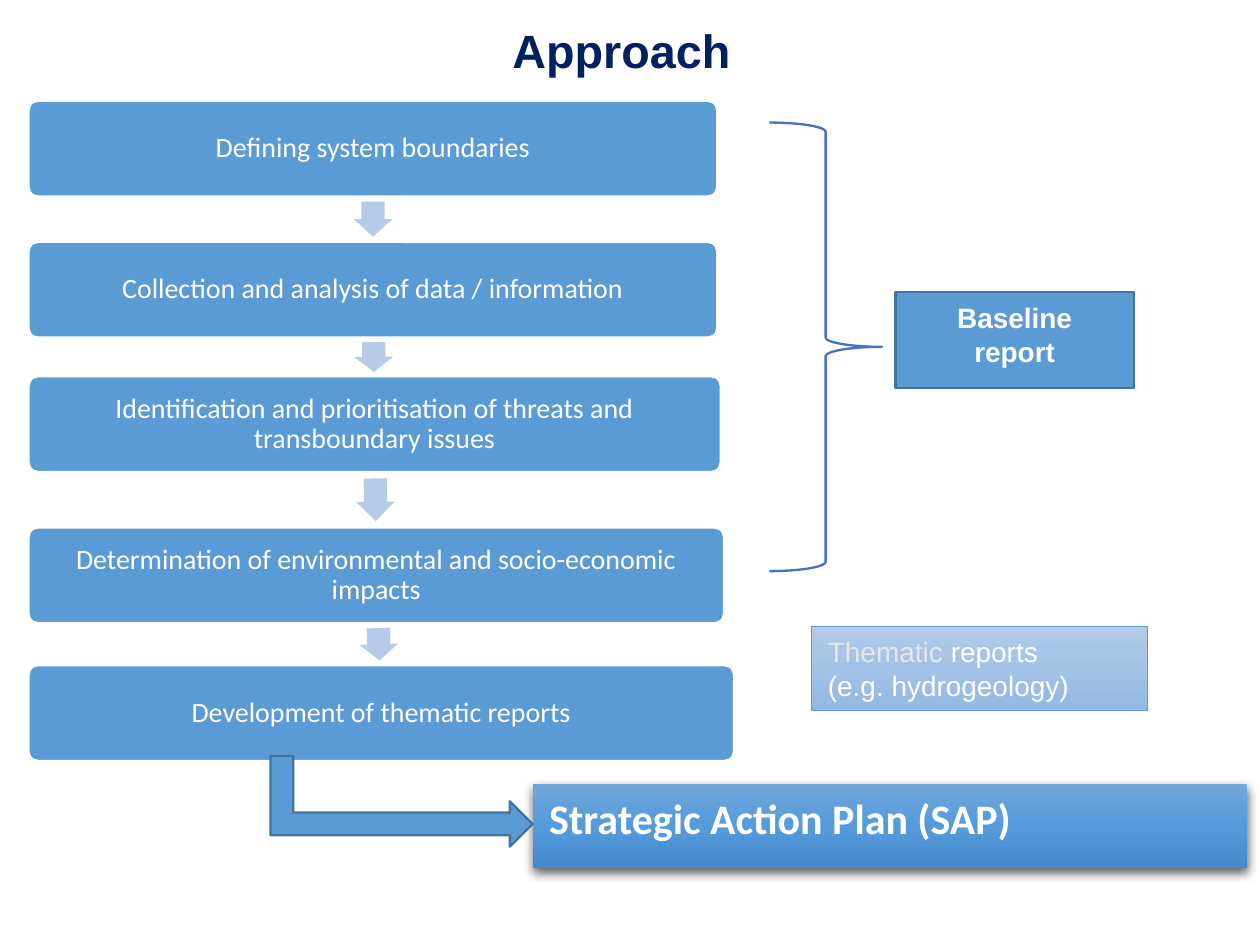
from copy import deepcopy
from dataclasses import dataclass
from itertools import pairwise
from math import atan2, degrees

from pptx import Presentation
from pptx.dml.color import RGBColor
from pptx.enum.shapes import MSO_SHAPE as Shape
from pptx.enum.text import MSO_ANCHOR as Anchor, PP_ALIGN as Align
from pptx.oxml import parse_xml
from pptx.oxml.ns import nsdecls, qn
from pptx.shapes.autoshape import Shape as AutoShape
from pptx.slide import Slide
from pptx.util import Inches, Pt

WHITE = RGBColor(0xFF, 0xFF, 0xFF)
NAVY = RGBColor(0x00, 0x20, 0x60)
BLUE = RGBColor(0x5B, 0x9B, 0xD5)
DARK_BLUE = RGBColor(0x43, 0x73, 0x9E)
BRACE_BLUE = RGBColor(0x44, 0x72, 0xC4)
PALE_BLUE = RGBColor(0xB5, 0xCB, 0xE7)
LIGHT_GREY = RGBColor(0xE7, 0xE6, 0xE6)
THEMATIC_GRADIENT = (RGBColor(0xB1, 0xCB, 0xE9), RGBColor(0xA3, 0xC1, 0xE5), RGBColor(0x93, 0xB9, 0xE4))
PLAN_GRADIENT = (RGBColor(0x71, 0xA6, 0xDB), RGBColor(0x55, 0x9B, 0xDB), RGBColor(0x44, 0x8A, 0xCA))

SLIDE_WIDTH = 7.5
SLIDE_HEIGHT = SLIDE_WIDTH * 3 / 4
STEP_LEFT = 0.17
STEP_HEIGHT = 0.57
ARROW_BREADTH = 0.23
ARROW_SHARE_OF_GAP = 0.77


@dataclass(frozen=True)
class Step:
    text: str
    top: float
    width: float

    @property
    def center(self) -> float:
        return STEP_LEFT + self.width / 2

    @property
    def bottom(self) -> float:
        return self.top + STEP_HEIGHT


STEPS = (
    Step("Defining system boundaries", 0.6, 4.1),
    Step("Collection and analysis of data / information", 1.44, 4.1),
    Step("Identification and prioritisation of threats and transboundary issues", 2.24, 4.12),
    Step("Determination of environmental and socio-economic impacts", 3.14, 4.14),
    Step("Development of thematic reports", 3.96, 4.2),
)


def write_text(shape: AutoShape, *lines: str, font: str = "Arial", size: float = 12,
               color: RGBColor = WHITE, bold: bool = False, align: Align = Align.LEFT,
               anchor: Anchor = Anchor.TOP, inset: float = 0.1, spacing: float = 1.0,
               lead: str = "", lead_color: RGBColor = WHITE) -> None:
    frame = shape.text_frame
    frame.word_wrap = True
    frame.vertical_anchor = anchor
    frame.margin_left = frame.margin_right = Inches(inset)
    frame.margin_top = frame.margin_bottom = Inches(0.05)
    for index, line in enumerate(lines):
        paragraph = frame.add_paragraph() if index else frame.paragraphs[0]
        paragraph.alignment = align
        paragraph.line_spacing = spacing
        pieces = [(line, color)]
        if lead and index == 0:
            pieces.insert(0, (lead, lead_color))
        for text, piece_color in pieces:
            run = paragraph.add_run()
            run.text = text
            run.font.name = font
            run.font.size = Pt(size)
            run.font.bold = bold
            run.font.color.rgb = piece_color


def add_shape(slide: Slide, kind: Shape, left: float, top: float, width: float, height: float,
              fill: RGBColor | None = None, line: RGBColor | None = None,
              line_width: float = 1, rotation: float = 0) -> AutoShape:
    shape = slide.shapes.add_shape(kind, Inches(left), Inches(top), Inches(width), Inches(height))
    shape.shadow.inherit = False
    shape.rotation = rotation
    if fill is None:
        shape.fill.background()
    else:
        shape.fill.solid()
        shape.fill.fore_color.rgb = fill
    if line is None:
        shape.line.fill.background()
    else:
        shape.line.color.rgb = line
        shape.line.width = Pt(line_width)
    return shape


def apply_gradient(shape: AutoShape, colors: tuple[RGBColor, ...]) -> None:
    shape.fill.gradient()
    shape.fill.gradient_angle = 270
    stop_elements = shape._element.spPr.find(qn("a:gradFill")).find(qn("a:gsLst"))
    stop_elements.append(deepcopy(stop_elements[0]))
    for index, (stop, color) in enumerate(zip(shape.fill.gradient_stops, colors)):
        stop.position = index / (len(colors) - 1)
        stop.color.rgb = color


def apply_shadow(shape: AutoShape) -> None:
    effects = shape._element.spPr.find(qn("a:effectLst"))
    effects.append(parse_xml(
        f'<a:outerShdw {nsdecls("a")} blurRad="{Pt(4.5)}" dist="{Pt(1.5)}" dir="5400000" '
        'algn="ctr" rotWithShape="0"><a:srgbClr val="000000"><a:alpha val="63000"/>'
        '</a:srgbClr></a:outerShdw>'))


def add_step(slide: Slide, step: Step) -> None:
    box = add_shape(slide, Shape.ROUNDED_RECTANGLE, STEP_LEFT, step.top, step.width, STEP_HEIGHT,
                    fill=BLUE, line=WHITE)
    box.adjustments[0] = 0.1
    write_text(box, step.text, font="Calibri", align=Align.CENTER, anchor=Anchor.MIDDLE,
               inset=0.05, spacing=0.9)


def add_step_arrow(slide: Slide, upper: Step, lower: Step) -> None:
    length = (lower.top - upper.bottom) * ARROW_SHARE_OF_GAP
    center_x = (upper.center + lower.center) / 2
    center_y = (upper.bottom + lower.top) / 2
    angle = degrees(atan2(lower.top - upper.top, lower.center - upper.center))
    arrow = add_shape(slide, Shape.RIGHT_ARROW, center_x - length / 2, center_y - ARROW_BREADTH / 2,
                      length, ARROW_BREADTH, fill=PALE_BLUE, rotation=angle)
    arrow.adjustments[0] = 0.6
    arrow.adjustments[1] = 0.5


def main() -> None:
    presentation = Presentation()
    presentation.slide_width = Inches(SLIDE_WIDTH)
    presentation.slide_height = Inches(SLIDE_HEIGHT)
    slide = presentation.slides.add_slide(presentation.slide_layouts[5])

    title = slide.shapes.title
    title.left, title.top, title.width, title.height = map(Inches, (0.08, 0.08, 7.24, 0.44))
    write_text(title, "Approach", size=20, color=NAVY, bold=True, align=Align.CENTER)

    for step in STEPS:
        add_step(slide, step)
    for upper, lower in pairwise(STEPS):
        add_step_arrow(slide, upper, lower)

    baseline = add_shape(slide, Shape.RECTANGLE, 5.33, 1.74, 1.42, 0.57, fill=BLUE, line=DARK_BLUE)
    write_text(baseline, "Baseline", "report", bold=True, align=Align.CENTER)

    thematic = add_shape(slide, Shape.RECTANGLE, 4.83, 3.73, 2, 0.5, line=BLUE, line_width=0.5)
    apply_gradient(thematic, THEMATIC_GRADIENT)
    write_text(thematic, " reports", "(e.g. hydrogeology)", lead="Thematic", lead_color=LIGHT_GREY)

    plan = add_shape(slide, Shape.RECTANGLE, 3.17, 4.67, 4.25, 0.5)
    apply_gradient(plan, PLAN_GRADIENT)
    apply_shadow(plan)
    write_text(plan, "Strategic Action Plan (SAP)", font="Calibri", size=18, bold=True)

    add_shape(slide, Shape.BENT_UP_ARROW, 2.12, 3.99, 0.54, 1.56, fill=BLUE, line=DARK_BLUE, rotation=90)
    add_shape(slide, Shape.RIGHT_BRACE, 4.58, 0.73, 0.67, 2.67, line=BRACE_BLUE)

    presentation.save("out.pptx")


if __name__ == "__main__":
    main()
